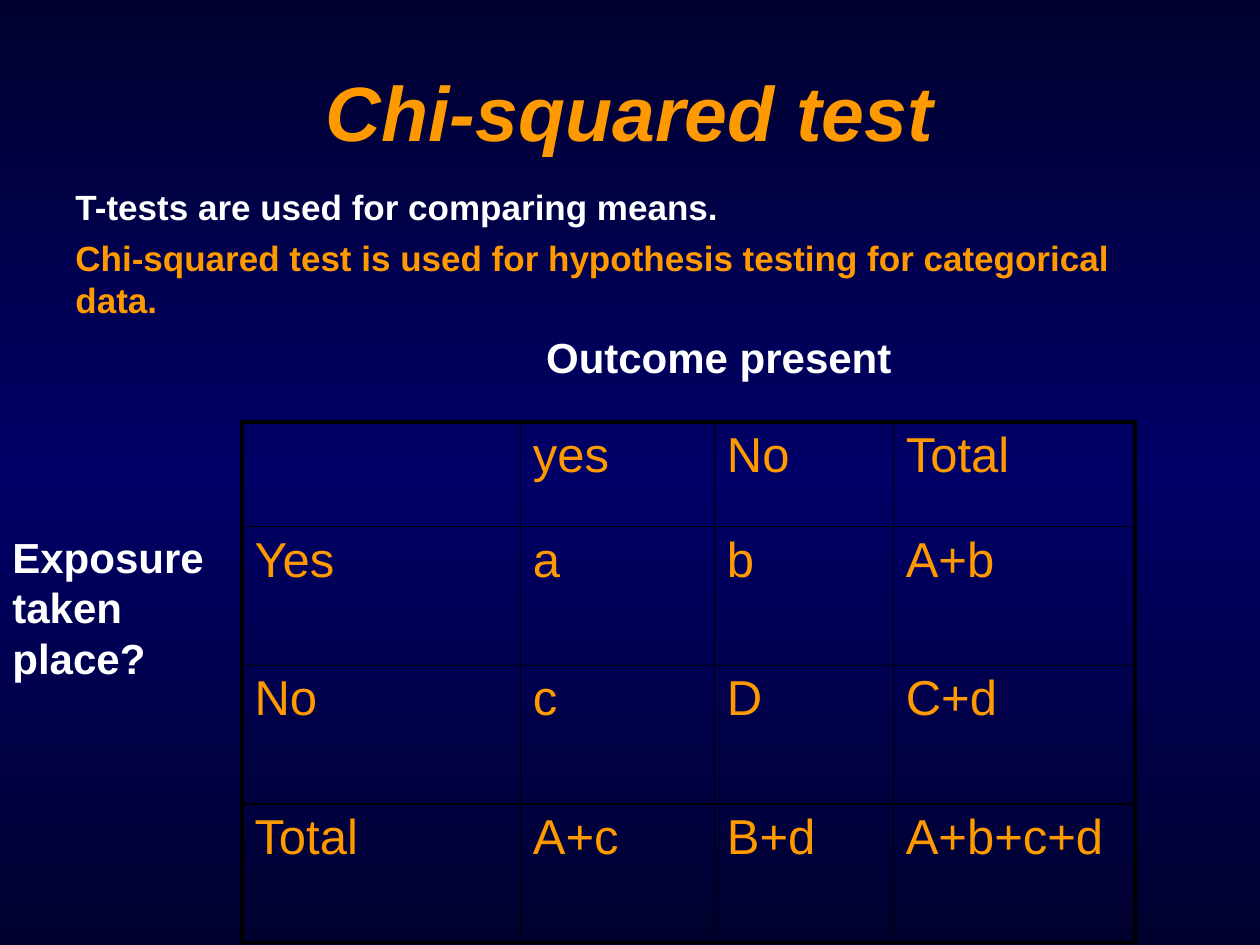
from copy import deepcopy

from pptx import Presentation
from pptx.dml.color import RGBColor as RGB
from pptx.enum.text import MSO_ANCHOR as ANCHOR, PP_ALIGN as ALIGN
from pptx.oxml import parse_xml
from pptx.oxml.ns import nsdecls, qn
from pptx.util import Inches, Pt

THEME = {
    "font": "Arial",
    "orange": "FF9900", "white": "FFFFFF", "border": "000000",
    "gradient": [(0, "00002F"), (0.5, "000066"), (1, "00002F")],
    "title": 44, "body": 20, "label": 24, "cell": 28,
    "outer": 2.25, "inner": 1,
}

TEXTS = [
    ("Chi-squared test", (0.5, 0.25, 9, 1.25),
     dict(size="title", color="orange", bold=True, italic=True,
          align=ALIGN.CENTER, anchor=ANCHOR.MIDDLE)),
    ("T-tests are used for comparing means.", (0.5, 1.42, 5.31, 0.43),
     dict(size="body", bold=True)),
    ("Chi-squared test is used for hypothesis testing for categorical data.",
     (0.5, 1.83, 9.11, 0.43), dict(size="body", color="orange", bold=True)),
    ("Outcome present", (3.83, 2.58, 3.75, 0.5),
     dict(size="label", bold=True, align=ALIGN.CENTER)),
    ("Exposure taken place?", (0, 4.17, 1.75, 1.3),
     dict(size="label", bold=True)),
]

TABLE_AT = (1.92, 3.35)
COLS = [2.21, 1.54, 1.42, 1.92]
ROWS = [0.83, 1.1, 1.1, 1.1]
CELLS = [
    ["", "yes", "No", "Total"],
    ["Yes", "a", "b", "A+b"],
    ["No", "c", "D", "C+d"],
    ["Total", "A+c", "B+d", "A+b+c+d"],
]


def write(tf, text, size="body", color="white", bold=False, italic=False,
          align=ALIGN.LEFT, anchor=ANCHOR.TOP):
    tf.word_wrap = True
    tf.vertical_anchor = anchor
    p = tf.paragraphs[0]
    p.alignment = align
    r = p.add_run()
    r.text = text
    r.font.name = THEME["font"]
    r.font.size = Pt(THEME[size])
    r.font.bold = bold
    r.font.italic = italic
    r.font.color.rgb = RGB.from_string(THEME[color])


def paint_background(s):
    fill = s.background.fill
    fill.gradient()
    fill.gradient_angle = 270
    stops = s._element.find(".//" + qn("a:gsLst"))
    stops.append(deepcopy(stops[-1]))
    for stop, (position, color) in zip(fill.gradient_stops, THEME["gradient"]):
        stop.position = position
        stop.color.rgb = RGB.from_string(color)


def set_borders(cell, row, col):
    outer = {"L": col == 0, "R": col == len(COLS) - 1,
             "T": row == 0, "B": row == len(ROWS) - 1}
    tcPr = cell._tc.get_or_add_tcPr()
    for i, (side, is_outer) in enumerate(outer.items()):
        width = Pt(THEME["outer" if is_outer else "inner"])
        tcPr.insert(i, parse_xml(
            f'<a:ln{side} {nsdecls("a")} w="{width}"><a:solidFill>'
            f'<a:srgbClr val="{THEME["border"]}"/></a:solidFill></a:ln{side}>'))


def add_grid(s):
    size = (sum(COLS), sum(ROWS))
    table = s.shapes.add_table(len(ROWS), len(COLS),
                               *map(Inches, TABLE_AT + size)).table
    table.first_row = table.horz_banding = False
    for column, width in zip(table.columns, COLS):
        column.width = Inches(width)
    for line, height in zip(table.rows, ROWS):
        line.height = Inches(height)
    for row, texts in enumerate(CELLS):
        for col, text in enumerate(texts):
            cell = table.cell(row, col)
            cell.fill.background()
            set_borders(cell, row, col)
            if text:
                write(cell.text_frame, text, size="cell", color="orange")


def main():
    prs = Presentation()
    prs.slide_width, prs.slide_height = Inches(10), Inches(7.5)
    s = prs.slides.add_slide(prs.slide_layouts[6])
    paint_background(s)
    for text, box, style in TEXTS:
        sp = s.shapes.add_textbox(*map(Inches, box))
        write(sp.text_frame, text, **style)
    add_grid(s)
    prs.save("out.pptx")


if __name__ == "__main__":
    main()
